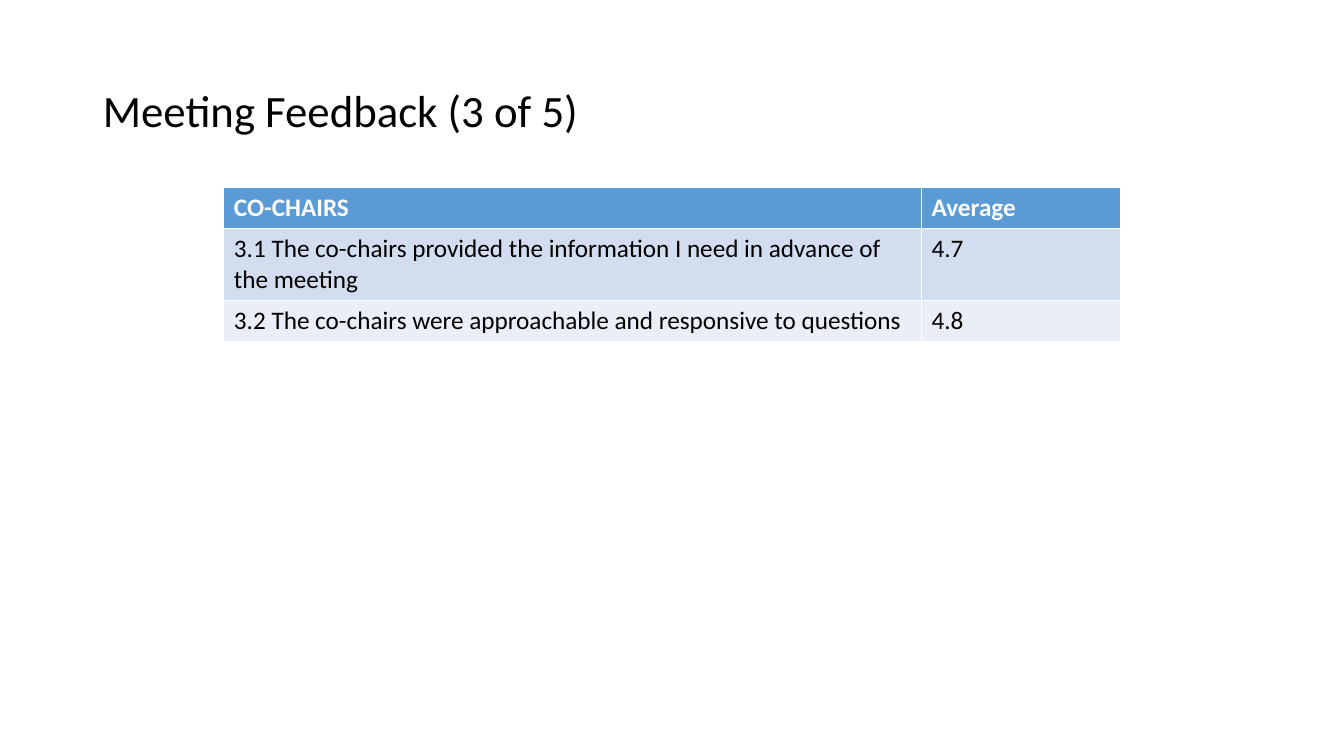
"""Build the meeting feedback slide with its table of co-chair ratings."""
from pptx import Presentation
from pptx.dml.color import RGBColor
from pptx.enum.text import MSO_ANCHOR, PP_ALIGN
from pptx.util import Inches, Pt

BLACK = RGBColor(0x00, 0x00, 0x00)
WHITE = RGBColor(0xFF, 0xFF, 0xFF)
HEADER_BLUE = RGBColor(0x5B, 0x9B, 0xD5)
BANDS = [RGBColor(0xEA, 0xEF, 0xF7), RGBColor(0xD2, 0xDE, 0xEF)]
FONT = "Calibri"
COL_WIDTHS = [6.92, 1.97]
ROW_HEIGHT = 0.41
RATINGS = [
    ("CO-CHAIRS", "Average"),
    ("3.1 The co-chairs provided the information I need in advance of the meeting", "4.7"),
    ("3.2 The co-chairs were approachable and responsive to questions", "4.8"),
]


def format_font(p, size, color, bold=False):
    for r in p.runs:
        r.font.name = FONT
        r.font.size = Pt(size)
        r.font.color.rgb = color
        r.font.bold = bold


prs = Presentation()
prs.slide_width, prs.slide_height = Inches(13.33), Inches(7.5)
s = prs.slides.add_slide(prs.slide_layouts[5])

title = s.shapes.title
title.left, title.top = Inches(0.92), Inches(0.4)
title.width, title.height = Inches(11.5), Inches(1.45)
tf = title.text_frame
tf.text = "Meeting Feedback (3 of 5)"
tf.word_wrap = True
tf.vertical_anchor = MSO_ANCHOR.MIDDLE
p = tf.paragraphs[0]
p.alignment = PP_ALIGN.LEFT
p.line_spacing = 0.9
format_font(p, 32, BLACK)

table = s.shapes.add_table(
    len(RATINGS), len(COL_WIDTHS), Inches(2.22), Inches(1.86),
    Inches(sum(COL_WIDTHS)), Inches(ROW_HEIGHT * len(RATINGS))).table
for column, width in zip(table.columns, COL_WIDTHS):
    column.width = Inches(width)

for i, rating in enumerate(RATINGS):
    table.rows[i].height = Inches(ROW_HEIGHT)
    header = i == 0
    for j, text in enumerate(rating):
        cell = table.cell(i, j)
        cell.text_frame.text = text
        cell.fill.solid()
        cell.fill.fore_color.rgb = HEADER_BLUE if header else BANDS[i % 2]
        format_font(cell.text_frame.paragraphs[0], 18, WHITE if header else BLACK, header)

prs.save("out.pptx")
